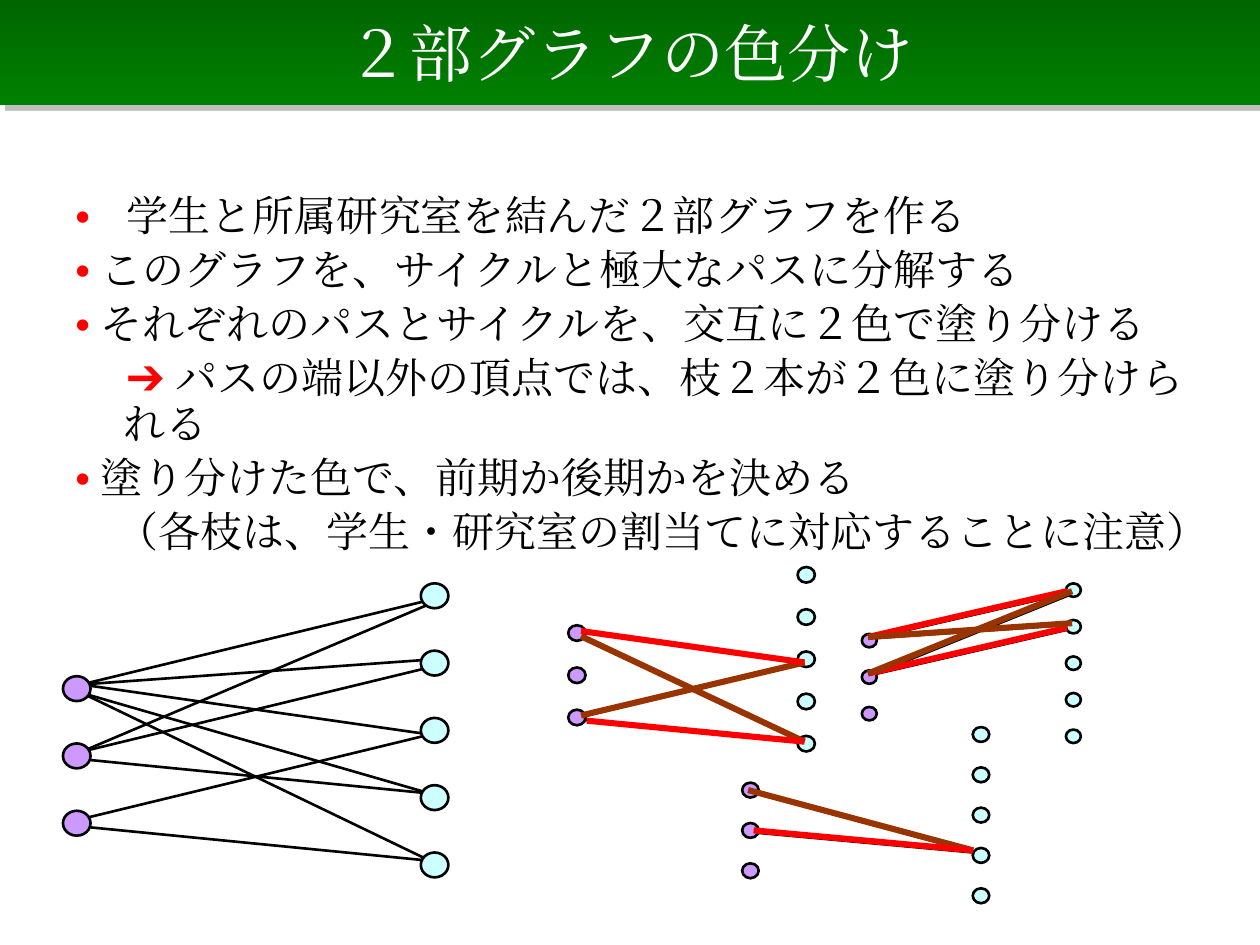
from dataclasses import dataclass

from lxml.etree import SubElement
from pptx import Presentation
from pptx.dml.color import RGBColor
from pptx.enum.shapes import MSO_CONNECTOR as Connector, MSO_SHAPE as Shape
from pptx.enum.text import MSO_ANCHOR as Anchor, PP_ALIGN as Align
from pptx.oxml.ns import qn
from pptx.util import Inches, Pt

WHITE = RGBColor(0xFF, 0xFF, 0xFF)
BLACK = RGBColor(0, 0, 0)
RED = RGBColor(0xFF, 0, 0)
BROWN = RGBColor(0x99, 0x33, 0)
DARK_GREEN = RGBColor(0, 0x66, 0)
GREEN = RGBColor(0, 0x80, 0)
STUDENT_FILL = RGBColor(0xCC, 0x99, 0xFF)
LAB_FILL = RGBColor(0xCC, 0xFF, 0xFF)

COLUMNS, ROWS = 100, 75
STUDENTS, LABS = 3, 5
STUDENT_DROP = 1.38
NODE_WIDTH, NODE_HEIGHT = 0.41, 0.37

INNER_HIGH, INNER_LOW, OUTER_LOW = (2, 1), (2, 2), (3, 2)
NEAR_HIGH, NEAR_LOW, FAR_HIGH, FAR_LOW = (1, 1), (1, 2), (2, 1), (2, 2)

BULLET = "•"
ARROW = "➔"
POINTS = [
    (BULLET + "\t", "学生と所属研究室を結んだ２部グラフを作る", 0.41, -0.41),
    (BULLET + " ", "このグラフを、サイクルと極大なパスに分解する", 0.38, -0.38),
    (BULLET + " ", "それぞれのパスとサイクルを、交互に２色で塗り分ける", 0.38, -0.38),
    (ARROW + " ", "パスの端以外の頂点では、枝２本が２色に塗り分けられる", 0.38, 0.03),
    (BULLET + " ", "塗り分けた色で、前期か後期かを決める", 0.38, -0.38),
    ("", "（各枝は、学生・研究室の割当てに対応することに注意）", 0.38, -0.05),
]


@dataclass
class Edge:
    student: int
    lab: int
    student_port: tuple
    lab_port: tuple
    color: RGBColor = BLACK


@dataclass
class Graph:
    left: float
    top: float
    span: float
    step: float
    edges: list
    shift: tuple = (0, 0)

    def student(self, index):
        return self.left, self.top + (STUDENT_DROP + index) * self.step

    def lab(self, index):
        return self.left + self.span, self.top + index * self.step

    def port(self, node, thirds):
        return (node[0] + NODE_WIDTH * self.step * thirds[0] / 3,
                node[1] + NODE_HEIGHT * self.step * thirds[1] / 3)

    def ends(self, edge):
        return (self.port(self.lab(edge.lab), edge.lab_port),
                self.port(self.student(edge.student), edge.student_port))


WHOLE = Graph(5, 46.3, 28.4, 5.34, [
    Edge(0, 0, INNER_HIGH, NEAR_LOW),
    Edge(2, 2, INNER_HIGH, NEAR_LOW),
    Edge(1, 1, INNER_HIGH, NEAR_LOW),
    Edge(0, 4, INNER_LOW, NEAR_HIGH),
    Edge(0, 3, INNER_LOW, NEAR_HIGH),
    Edge(2, 4, OUTER_LOW, NEAR_HIGH),
    Edge(1, 3, OUTER_LOW, NEAR_HIGH),
    Edge(0, 2, INNER_HIGH, NEAR_LOW),
    Edge(0, 1, INNER_HIGH, FAR_HIGH),
    Edge(1, 0, INNER_HIGH, FAR_LOW),
])
LEFT_CYCLE = Graph(45.1, 45, 18.2, 3.35, [
    Edge(2, 2, INNER_HIGH, NEAR_LOW, BROWN),
    Edge(0, 4, INNER_LOW, NEAR_HIGH, BROWN),
    Edge(2, 4, OUTER_LOW, NEAR_HIGH, RED),
    Edge(0, 2, INNER_HIGH, NEAR_LOW, RED),
], (0.1, 0.05))
RIGHT_CYCLE = Graph(68.4, 46.3, 16.2, 2.9, [
    Edge(0, 0, INNER_HIGH, NEAR_LOW, RED),
    Edge(1, 1, INNER_HIGH, NEAR_LOW, RED),
    Edge(0, 1, INNER_HIGH, FAR_HIGH, BROWN),
    Edge(1, 0, INNER_HIGH, FAR_LOW, BROWN),
], (-0.3, -0.1))
PATH = Graph(58.9, 57.7, 18.3, 3.2, [
    Edge(0, 3, INNER_LOW, NEAR_HIGH, BROWN),
    Edge(1, 3, OUTER_LOW, NEAR_HIGH, RED),
], (-0.4, -0.2))


class SlideBuilder:
    """Draws titles, text and bipartite graphs on a grid of columns and rows."""

    def __init__(self, deck, font="Times New Roman"):
        self.slide = deck.slides.add_slide(deck.slide_layouts[6])
        self.column = deck.slide_width / COLUMNS
        self.row = deck.slide_height / ROWS
        self.font = font

    def place(self, *lengths):
        units = (self.column, self.row) * 2
        return [round(length * unit) for length, unit in zip(lengths, units)]

    def style(self, run, size, color, bold=False):
        run.font.name = self.font
        run.font.size = Pt(size)
        run.font.bold = bold
        run.font.color.rgb = color
        SubElement(run._r.rPr, qn("a:ea"), typeface=self.font)

    def title(self, text, height):
        banner = self.slide.shapes.add_shape(
            Shape.RECTANGLE, *self.place(0, 0, COLUMNS, height))
        banner.fill.gradient()
        banner.fill.gradient_angle = 270
        for stop, color in zip(banner.fill.gradient_stops, (DARK_GREEN, GREEN)):
            stop.color.rgb = color
        banner.line.fill.background()
        banner.shadow.inherit = False
        effects = banner._element.spPr.find(qn("a:effectLst"))
        shadow = SubElement(effects, qn("a:outerShdw"), blurRad="0",
                            dist=str(Pt(4.2)), dir="2700000", algn="ctr")
        shade = SubElement(shadow, qn("a:srgbClr"), val="808080")
        SubElement(shade, qn("a:alpha"), val="50000")
        frame = banner.text_frame
        frame.text = text
        frame.vertical_anchor = Anchor.MIDDLE
        frame.paragraphs[0].alignment = Align.CENTER
        self.style(frame.paragraphs[0].runs[0], 36, WHITE)

    def points(self, points, *area):
        frame = self.slide.shapes.add_textbox(*self.place(*area)).text_frame
        frame.word_wrap = True
        for index, (marker, text, margin, indent) in enumerate(points):
            paragraph = frame.add_paragraph() if index else frame.paragraphs[0]
            paragraph.line_spacing = 0.9
            paragraph.space_before = Pt(5)
            properties = paragraph._p.get_or_add_pPr()
            properties.set("marL", str(Inches(margin)))
            properties.set("indent", str(Inches(indent)))
            for part, color in ((marker, RED), (text, BLACK)):
                if part:
                    run = paragraph.add_run()
                    run.text = part
                    self.style(run, 24, color, bold=color == RED)

    def edge(self, group, start, end, color, width):
        line = group.shapes.add_connector(
            Connector.STRAIGHT, *self.place(*start, *end))
        line.line.color.rgb = color
        line.line.width = Pt(width)
        SubElement(line._element.spPr, qn("a:effectLst"))

    def node(self, group, corner, step, fill):
        dot = group.shapes.add_shape(Shape.OVAL, *self.place(
            *corner, NODE_WIDTH * step, NODE_HEIGHT * step))
        dot.shadow.inherit = False
        dot.fill.solid()
        dot.fill.fore_color.rgb = fill
        dot.line.color.rgb = BLACK
        dot.line.width = Pt(1.5)

    def graph(self, graph):
        group = self.slide.shapes.add_group_shape()
        for edge in graph.edges:
            self.edge(group, *graph.ends(edge), BLACK, 1.5)
        for index in range(LABS):
            self.node(group, graph.lab(index), graph.step, LAB_FILL)
        for index in range(STUDENTS):
            self.node(group, graph.student(index), graph.step, STUDENT_FILL)

    def coloring(self, graph):
        group = self.slide.shapes.add_group_shape()
        for edge in graph.edges:
            start, end = [(x + graph.shift[0], y + graph.shift[1])
                          for x, y in graph.ends(edge)]
            self.edge(group, start, end, edge.color, 3.5)


def main():
    deck = Presentation()
    deck.slide_width, deck.slide_height = Inches(10), Inches(7.5)
    builder = SlideBuilder(deck)
    builder.title("２部グラフの色分け", 8.33)
    builder.points(POINTS, 5, 15, 92.7, 28.3)
    for graph in (WHOLE, LEFT_CYCLE, RIGHT_CYCLE, PATH):
        builder.graph(graph)
    for graph in (PATH, RIGHT_CYCLE, LEFT_CYCLE):
        builder.coloring(graph)
    deck.save("out.pptx")


if __name__ == "__main__":
    main()
